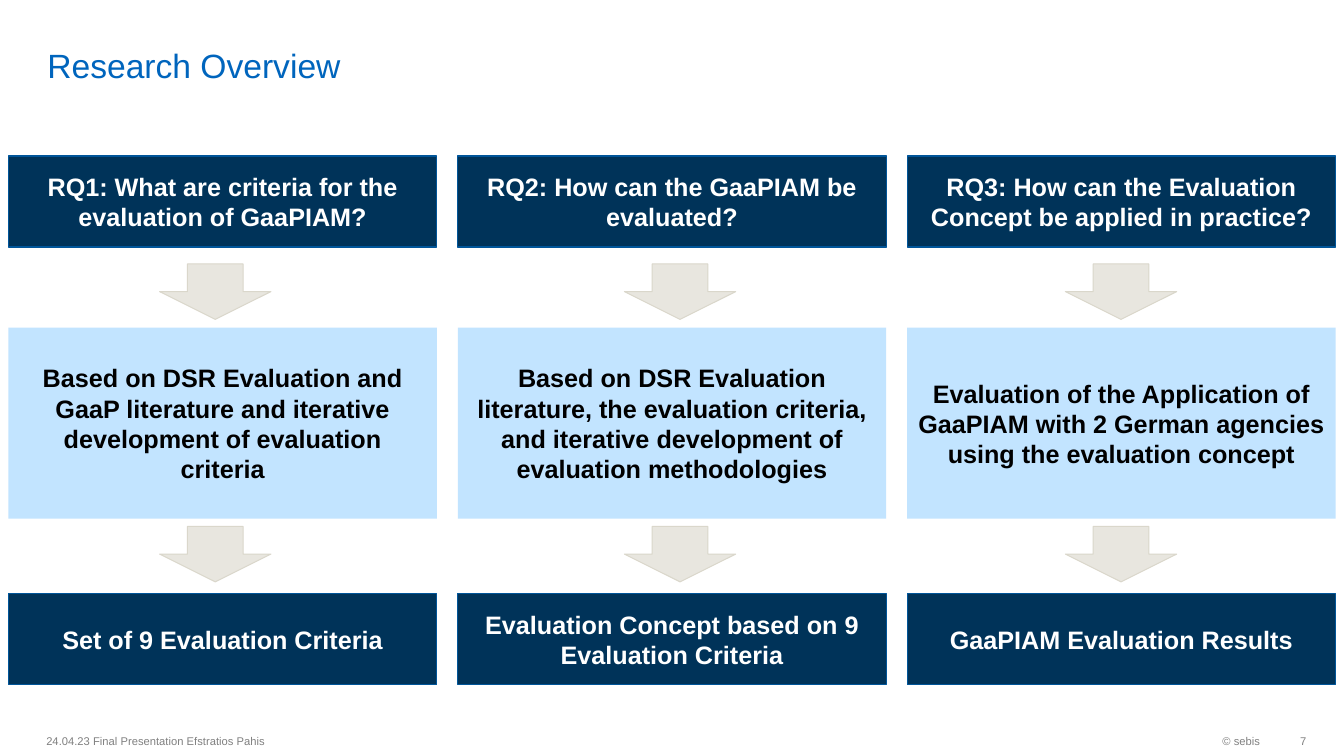
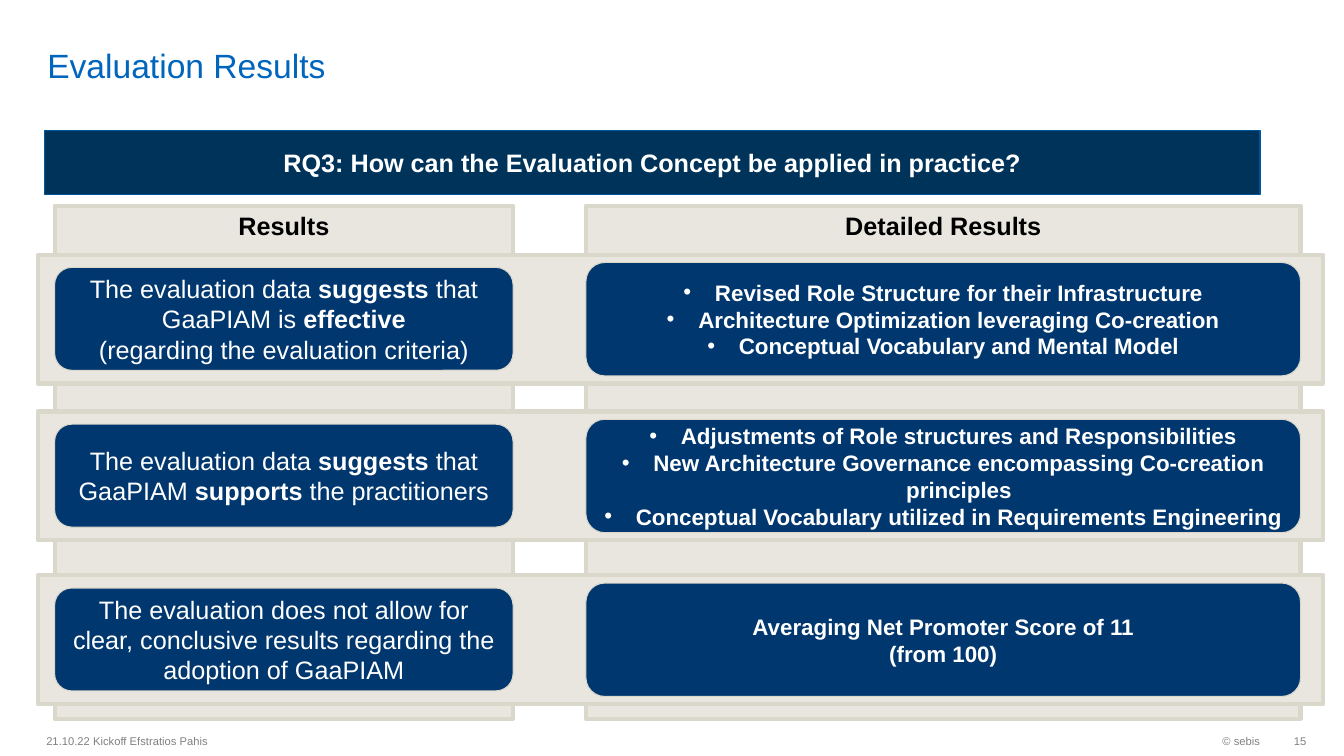
from lxml.etree import SubElement
from pptx import Presentation
from pptx.dml.color import RGBColor
from pptx.enum.shapes import MSO_SHAPE
from pptx.enum.text import MSO_ANCHOR, MSO_AUTO_SIZE, PP_ALIGN
from pptx.oxml.ns import qn
from pptx.util import Pt

FONT = "Arial"
TITLE_BLUE = RGBColor(0x00, 0x65, 0xBD)
NAVY = RGBColor(0x00, 0x33, 0x59)
NAVY_EDGE = RGBColor(0x00, 0x55, 0x99)
CARD_BLUE = RGBColor(0x00, 0x37, 0x6F)
PALE_BLUE = RGBColor(0xC2, 0xE4, 0xFF)
STONE = RGBColor(0xE8, 0xE6, 0xDF)
STONE_EDGE = RGBColor(0xDA, 0xD7, 0xCB)
GRAY = RGBColor(0x80, 0x80, 0x80)
BLACK = RGBColor(0, 0, 0)
WHITE = RGBColor(0xFF, 0xFF, 0xFF)


class SlideBuilder:
    """Holds the deck style and the current slide; asterisks in text enclose bold words."""

    def __init__(self):
        self.deck = Presentation()
        self.deck.slide_width, self.deck.slide_height = Pt(960), Pt(540)
        self.page = None

    def start_page(self, title, footer, number):
        self.page = self.deck.slides.add_slide(self.deck.slide_layouts[5])
        box = self.page.shapes.title
        box.left, box.top, box.width, box.height = Pt(26.6), Pt(3.6), Pt(834), Pt(57)
        frame = box.text_frame
        frame.auto_size = MSO_AUTO_SIZE.NONE
        frame.margin_top = frame.margin_bottom = 0
        self.fill_text(frame, [title], 24, TITLE_BLUE, align=PP_ALIGN.LEFT,
                       anchor=MSO_ANCHOR.BOTTOM)
        self.footer_text(footer, 26, 453.6, PP_ALIGN.LEFT)
        self.footer_text("© sebis", 738.7, 168.5, PP_ALIGN.RIGHT)
        self.footer_text(number, 907.2, 26, PP_ALIGN.RIGHT, margin_right=0)

    def footer_text(self, text, left, width, align, margin_right=7.2):
        box = self.page.shapes.add_textbox(Pt(left), Pt(517.5), Pt(width), Pt(23))
        box.text_frame.margin_right = Pt(margin_right)
        self.fill_text(box.text_frame, [text], 8, GRAY, align=align)

    def fill_text(self, frame, lines, size, color, bold=False, bullets=False,
                  align=PP_ALIGN.CENTER, anchor=MSO_ANCHOR.MIDDLE):
        frame.word_wrap = True
        frame.vertical_anchor = anchor
        for index, line in enumerate(lines):
            para = frame.add_paragraph() if index else frame.paragraphs[0]
            para.alignment = align
            if bullets:
                self.add_bullet(para)
            para.font.name, para.font.size, para.font.bold = FONT, Pt(size), bold
            para.font.color.rgb = color
            for position, text in enumerate(line.split("*")):
                if text:
                    span = para.add_run()
                    span.text = text
                    if position % 2:
                        span.font.bold = True

    def add_bullet(self, para):
        properties = para._p.get_or_add_pPr()
        properties.set("marL", str(Pt(22.5)))
        properties.set("indent", str(-Pt(22.5)))
        SubElement(properties, qn("a:buFont")).set("typeface", FONT)
        SubElement(properties, qn("a:buChar")).set("char", "•")

    def block(self, kind, left, top, width, height, fill, edge=None, weight=0.75):
        shape = self.page.shapes.add_shape(kind, Pt(left), Pt(top), Pt(width), Pt(height))
        shape.shadow.inherit = False
        shape.fill.solid()
        shape.fill.fore_color.rgb = fill
        if edge is None:
            shape.line.fill.background()
        else:
            shape.line.color.rgb = edge
            shape.line.width = Pt(weight)
        return shape

    def navy_box(self, text, left, top, width, height):
        shape = self.block(MSO_SHAPE.RECTANGLE, left, top, width, height, NAVY, NAVY_EDGE, 0.85)
        self.fill_text(shape.text_frame, [text], 18, WHITE, bold=True)

    def pale_box(self, text, left, top, width, height):
        shape = self.block(MSO_SHAPE.RECTANGLE, left, top, width, height, PALE_BLUE)
        self.fill_text(shape.text_frame, [text], 18, BLACK, bold=True)

    def down_arrow(self, left, top):
        self.block(MSO_SHAPE.DOWN_ARROW, left, top, 79.5, 39.6, STONE, STONE_EDGE)

    def stone_panel(self, left, top, width, height, heading=None):
        shape = self.block(MSO_SHAPE.RECTANGLE, left, top, width, height, STONE, STONE_EDGE, 3)
        if heading:
            self.fill_text(shape.text_frame, [heading], 18, BLACK, bold=True,
                           anchor=MSO_ANCHOR.TOP)

    def card(self, lines, left, top, width, height, size, bold=False, bullets=False):
        shape = self.block(MSO_SHAPE.ROUNDED_RECTANGLE, left, top, width, height,
                           CARD_BLUE, STONE_EDGE)
        self.fill_text(shape.text_frame, lines, size, WHITE, bold, bullets)


def build_overview(builder):
    builder.start_page("Research Overview", "24.04.23 Final Presentation Efstratios Pahis", "7")
    columns = [
        (114, "RQ1: What are criteria for the evaluation of GaaPIAM?",
         "Based on DSR Evaluation and GaaP literature and iterative development of "
         "evaluation criteria",
         "Set of 9 Evaluation Criteria"),
        (446, "RQ2: How can the GaaPIAM be evaluated?",
         "Based on DSR Evaluation literature, the evaluation criteria, and iterative "
         "development of evaluation methodologies",
         "Evaluation Concept based on 9 Evaluation Criteria"),
        (761, "RQ3: How can the Evaluation Concept be applied in practice?",
         "Evaluation of the Application of GaaPIAM with 2 German agencies using the "
         "evaluation concept",
         "GaaPIAM Evaluation Results"),
    ]
    width = 306
    for index, (arrow_left, question, method, outcome) in enumerate(columns):
        left = 6 + index * 321
        builder.navy_box(question, left, 111.5, width, 65)
        builder.down_arrow(arrow_left, 188.5)
        builder.pale_box(method, left, 234, width, 136.5)
        builder.down_arrow(arrow_left, 376)
        builder.navy_box(outcome, left, 424, width, 65)


def build_results(builder):
    builder.start_page("Evaluation Results", "21.10.22 Kickoff Efstratios Pahis", "15")
    result_left, result_width = 39, 327.5
    detail_left, detail_width = 418.5, 510.5
    builder.stone_panel(detail_left, 147, detail_width, 366.5, "Detailed Results")
    builder.stone_panel(result_left, 147, result_width, 366.5, "Results")
    rows = [
        (182,
         ["The evaluation data *suggests* that GaaPIAM is *effective*",
          "(regarding the evaluation criteria)"],
         ["Revised Role Structure for their Infrastructure",
          "Architecture Optimization leveraging Co-creation",
          "Conceptual Vocabulary and Mental Model"], True),
        (294,
         ["The evaluation data *suggests* that GaaPIAM *supports* the practitioners"],
         ["Adjustments of Role structures and Responsibilities",
          "New Architecture Governance encompassing Co-creation principles",
          "Conceptual Vocabulary utilized in Requirements Engineering"], True),
        (411,
         ["The evaluation does not allow for clear, conclusive results regarding the "
          "adoption of GaaPIAM"],
         ["Averaging Net Promoter Score of 11", "(from 100)"], False),
    ]
    for top, result, details, bullets in rows:
        builder.stone_panel(27, top, 918, 92)
        builder.card(result, result_left, top + 9, result_width, 73.5, 18)
        builder.card(details, detail_left, top + 5.5, detail_width, 81, 16, True, bullets)
    builder.navy_box("RQ3: How can the Evaluation Concept be applied in practice?",
                     32, 93.5, 868, 45.5)


def main():
    builder = SlideBuilder()
    build_overview(builder)
    build_results(builder)
    builder.deck.save("out.pptx")


if __name__ == "__main__":
    main()
